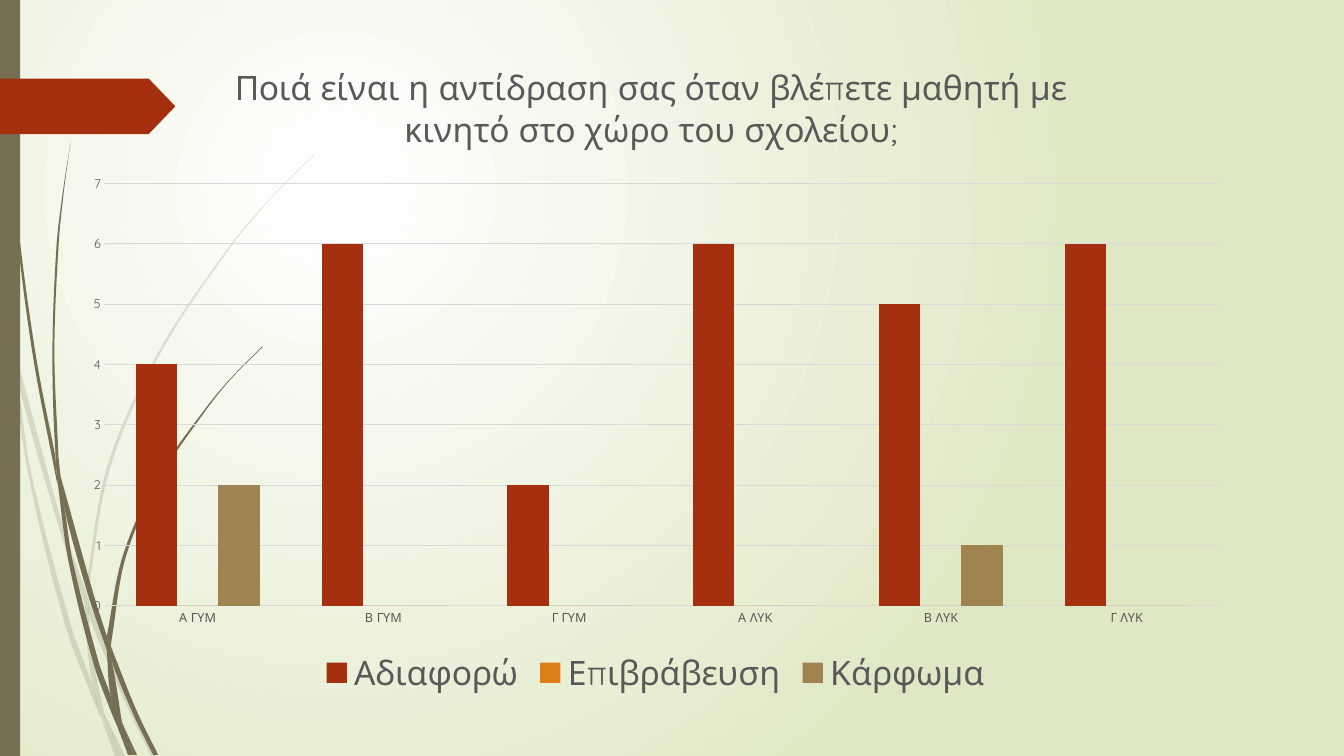
from dataclasses import dataclass
from math import dist

from lxml import etree
from pptx import Presentation
from pptx.chart.data import CategoryChartData
from pptx.dml.color import RGBColor
from pptx.enum.chart import XL_CHART_TYPE, XL_LEGEND_POSITION, XL_TICK_MARK
from pptx.enum.shapes import MSO_SHAPE
from pptx.oxml.ns import qn
from pptx.util import Cm, Pt

COLUMNS = XL_CHART_TYPE.COLUMN_CLUSTERED
BOTTOM = XL_LEGEND_POSITION.BOTTOM
NO_TICK = XL_TICK_MARK.NONE
RECTANGLE = MSO_SHAPE.RECTANGLE
ARROW_TAG = MSO_SHAPE.PENTAGON

QUESTION = "Ποιά είναι η αντίδραση σας όταν βλέπετε μαθητή με κινητό στο χώρο του σχολείου;"
CLASSES = ["Α ΓΥΜ", "Β ΓΥΜ", "Γ ΓΥΜ", "Α ΛΥΚ", "Β ΛΥΚ", "Γ ΛΥΚ"]
REACTIONS = {
    "Αδιαφορώ": (4, 6, 2, 6, 5, 6),
    "Επιβράβευση": (0, 0, 0, 0, 0, 0),
    "Κάρφωμα": (2, 0, 0, 0, 1, 0),
}

PALE_GRASS = [
    ([(.11, 3.5), (.09, 3.22), (0, 2.82)], [(0, 2.99), (.1, 3.44)]),
    ([(.14, 3.45), (.17, 3.76), (.58, 5.22), (.84, 5.99)], [(.85, 5.86), (.62, 5.2), (.14, 3.45)]),
    ([(.88, 5.96), (.88, 6.1), (1.23, 6.94), (1.5, 7.5)], [(1.55, 7.5), (1.27, 6.92), (.92, 6.07)]),
    ([(1.05, 7.11), (1.19, 7.5)], [(1.24, 7.5), (1.05, 7.11)]),
    ([(.11, 3.5), (.28, 4.7), (.65, 6.21), (.92, 6.93), (1.01, 7.14)],
     [(.99, 7.07), (.93, 6.83), (.7, 6.19), (.31, 4.69), (.17, 3.76), (.11, 3.5)]),
    ([(.84, 5.99), (.87, 6.46), (.93, 6.83), (1.05, 7.11)],
     [(1.03, 7.06), (.91, 6.46), (.88, 6.1), (.84, 5.99)]),
    ([(3.12, 1.53), (2.89, 1.75), (2.68, 1.97), (2.28, 2.44), (1.58, 3.48), (1.07, 4.61),
      (.85, 5.84)],
     [(.88, 5.96), (.88, 5.84), (1.1, 4.62), (1.6, 3.49), (2.29, 2.45), (2.68, 1.98),
      (2.9, 1.75), (3.12, 1.54)]),
    ([(1.01, 7.14), (1.14, 7.5)], [(1.19, 7.5), (1.01, 7.14)]),
    ([(.85, 5.86), (.84, 5.99), (.88, 6.1)], [(.88, 5.96), (.85, 5.86)]),
    ([(.93, 6.83), (.99, 7.07), (1.19, 7.5)], [(1.05, 7.11), (.96, 6.92), (.93, 6.83)]),
]
DARK_GRASS = [
    ([(.03, 0), (.04, .48), (.07, 1.1), (.17, 2.33), (.33, 3.55), (.57, 4.81)],
     [(.55, 4.53), (.36, 3.55), (.19, 2.32), (.08, 1.09), (.05, .48), (.04, 0)]),
    ([(.6, 4.72), (.64, 5.05), (.88, 5.92), (1.06, 6.45)], [(1.06, 6.31), (.93, 5.9), (.6, 4.72)]),
    ([(1.1, 6.41), (1.11, 6.56), (1.32, 7.08), (1.52, 7.49)],
     [(1.57, 7.49), (1.36, 7.06), (1.13, 6.49)]),
    ([(.57, 4.77), (.68, 5.57), (.93, 6.59), (1.11, 7.08), (1.17, 7.22)],
     [(1.16, 7.17), (1.1, 6.91), (.98, 6.57), (.72, 5.56), (.64, 5.05), (.57, 4.77)]),
    ([(.7, 1.41), (.62, 1.93), (.56, 2.45), (.52, 3.49), (.55, 4.49), (.6, 4.72)],
     [(.58, 4.53), (.54, 3.49), (.58, 2.45), (.63, 1.93), (.7, 1.41)]),
    ([(1.22, 7.19), (1.33, 7.49)], [(1.36, 7.49), (1.22, 7.19)]),
    ([(.55, 4.49), (.57, 4.77), (.64, 5.05)], [(.6, 4.72), (.55, 4.49)]),
    ([(2.6, 3.44), (2.31, 3.73), (2.04, 4.05), (1.56, 4.74), (1.22, 5.51), (1.06, 6.31)],
     [(1.1, 6.41), (1.11, 6.33), (1.25, 5.52), (1.58, 4.76), (2.05, 4.06), (2.31, 3.74),
      (2.61, 3.44)]),
    ([(1.17, 7.22), (1.27, 7.49)], [(1.31, 7.49), (1.17, 7.22)]),
    ([(1.06, 6.45), (1.1, 6.91), (1.22, 7.19)], [(1.21, 7.16), (1.11, 6.56), (1.06, 6.45)]),
    ([(1.06, 6.31), (1.06, 6.45), (1.11, 6.56)], [(1.1, 6.41), (1.06, 6.31)]),
    ([(1.1, 6.91), (1.17, 7.22), (1.3, 7.49)], [(1.33, 7.49), (1.22, 7.19), (1.1, 6.91)]),
]
SIDE_BAR = (0, 0, .2, 7.5)
TAG = (0, .78, 1.74, .55)
CHART_AREA = (.69, .49, 11.63, 6.46)
PLOT_AREA = (1.04, 1.82, 11.06, 4.19)
QUESTION_CORNER = (2.27, .56)


@dataclass(frozen=True)
class Theme:
    font: str = "Quicksand"
    text: str = "595959"
    grid: str = "D9D9D9"
    olive: str = "766F54"
    accent: str = "A53010"
    glow: str = "FFFFFF"
    meadow: str = "DFE8C4"
    columns: tuple = ("A53010", "DE7E18", "9F8351")
    large: int = 24
    small: int = 9


THEME = Theme()


def rgb(code):
    return RGBColor.from_string(code)


def inches(values):
    return [Cm(value * 2.54) for value in values]


def apply(target, values):
    for attribute, value in values.items():
        setattr(target, attribute, value)


def style_font(font, size):
    apply(font, {"name": THEME.font, "size": Pt(size), "bold": False})
    font.color.rgb = rgb(THEME.text)


def paint(shape, color, opacity=100):
    shape.shadow.inherit = False
    shape.fill.solid()
    shape.fill.fore_color.rgb = rgb(color)
    shape.line.fill.background()
    if opacity < 100:
        swatch = shape.fill._xPr.find(f".//{qn('a:srgbClr')}")
        etree.SubElement(swatch, qn("a:alpha"), val=str(opacity * 1000))


def handle(knot, before, after, reach):
    scale = reach / 3 / dist(before, after)
    return tuple(k + (a - b) * scale for k, b, a in zip(knot, before, after))


def bend(segments, knots):
    padded = [knots[0], *knots, knots[-1]]
    for segment, a, b, c, d in zip(segments, padded, padded[1:], padded[2:], padded[3:]):
        curve = etree.Element(qn("a:cubicBezTo"))
        for x, y in (handle(b, a, c, dist(b, c)), handle(c, d, b, dist(b, c)), c):
            etree.SubElement(curve, qn("a:pt"), x=str(round(x)), y=str(round(y)))
        segment.getparent().replace(segment, curve)


def add_blade(slide, there, back, opacity):
    outline = [inches(point) for point in there + back]
    builder = slide.shapes.build_freeform(*outline[0])
    builder.add_line_segments(outline[1:], close=True)
    blade = builder.convert_to_shape()
    route = blade._element.find(f".//{qn('a:path')}")
    knots = [(int(pt.get("x")), int(pt.get("y"))) for pt in route.iter(qn("a:pt"))]
    segments = route.findall(qn("a:lnTo"))
    turn = len(there)
    bend(segments[:turn - 1], knots[:turn])
    bend(segments[turn:], knots[turn:])
    paint(blade, THEME.olive, opacity)


def add_background(slide):
    fill = slide.background.fill
    fill.gradient()
    for stop, color in zip(fill.gradient_stops, (THEME.glow, THEME.meadow)):
        stop.color.rgb = rgb(color)
    gradient = slide.background._cSld.find(f".//{qn('a:gradFill')}")
    radial = etree.Element(qn("a:path"), path="circle")
    etree.SubElement(radial, qn("a:fillToRect"), l="50000", t="50000", r="100000", b="100000")
    gradient.replace(gradient.find(qn("a:lin")), radial)


def place(part, position, area):
    left, top, width, height = CHART_AREA
    for layout in part.findall(qn("c:layout")):
        part.remove(layout)
    layout = etree.Element(qn("c:layout"))
    manual = etree.SubElement(layout, qn("c:manualLayout"))
    modes = {"xMode": "edge", "yMode": "edge"}
    if len(area) == 4:
        modes = {"layoutTarget": "inner", **modes}
    shares = ((area[0] - left) / width, (area[1] - top) / height,
              *(size / full for size, full in zip(area[2:], (width, height))))
    for tag, value in (*modes.items(), *zip("xywh", shares)):
        etree.SubElement(manual, qn(f"c:{tag}"), val=str(value))
    part.insert(position, layout)


def add_reactions(slide):
    answers = CategoryChartData()
    answers.categories = CLASSES
    for reaction, counts in REACTIONS.items():
        answers.add_series(reaction, counts)
    chart = slide.shapes.add_chart(COLUMNS, *inches(CHART_AREA), answers).chart
    apply(chart, {"has_title": True, "has_legend": True})
    heading = chart.chart_title.text_frame
    heading.text = QUESTION
    style_font(heading.paragraphs[0].runs[0].font, THEME.large)
    apply(chart.legend, {"position": BOTTOM, "include_in_layout": False})
    style_font(chart.legend.font, THEME.large)
    for axis in (chart.category_axis, chart.value_axis):
        apply(axis, {"major_tick_mark": NO_TICK, "minor_tick_mark": NO_TICK})
        style_font(axis.tick_labels.font, THEME.small)
        axis.format.line.fill.background()
    apply(chart.value_axis, {"minimum_scale": 0, "maximum_scale": 7, "major_unit": 1})
    grid = chart.value_axis.major_gridlines.format.line
    grid.width = Pt(.75)
    grid.color.rgb = rgb(THEME.grid)
    plot = chart.plots[0]
    apply(plot, {"gap_width": 150, "overlap": 0, "vary_by_categories": False})
    for series, color in zip(plot.series, THEME.columns):
        series.format.fill.solid()
        series.format.fill.fore_color.rgb = rgb(color)
    place(chart._chartSpace.find(f".//{qn('c:plotArea')}"), 0, PLOT_AREA)
    place(chart.chart_title._element, 1, QUESTION_CORNER)


def main():
    deck = Presentation()
    apply(deck, {"slide_width": Cm(33.87), "slide_height": Cm(19.05)})
    slide = deck.slides.add_slide(deck.slide_layouts[6])
    add_background(slide)
    for blades, opacity in ((PALE_GRASS, 20), (DARK_GRASS, 100)):
        for there, back in blades:
            add_blade(slide, there, back, opacity)
    paint(slide.shapes.add_shape(RECTANGLE, *inches(SIDE_BAR)), THEME.olive)
    tag = slide.shapes.add_shape(ARROW_TAG, *inches(TAG))
    tag.adjustments[0] = .48
    paint(tag, THEME.accent)
    add_reactions(slide)
    deck.save("out.pptx")


if __name__ == "__main__":
    main()
